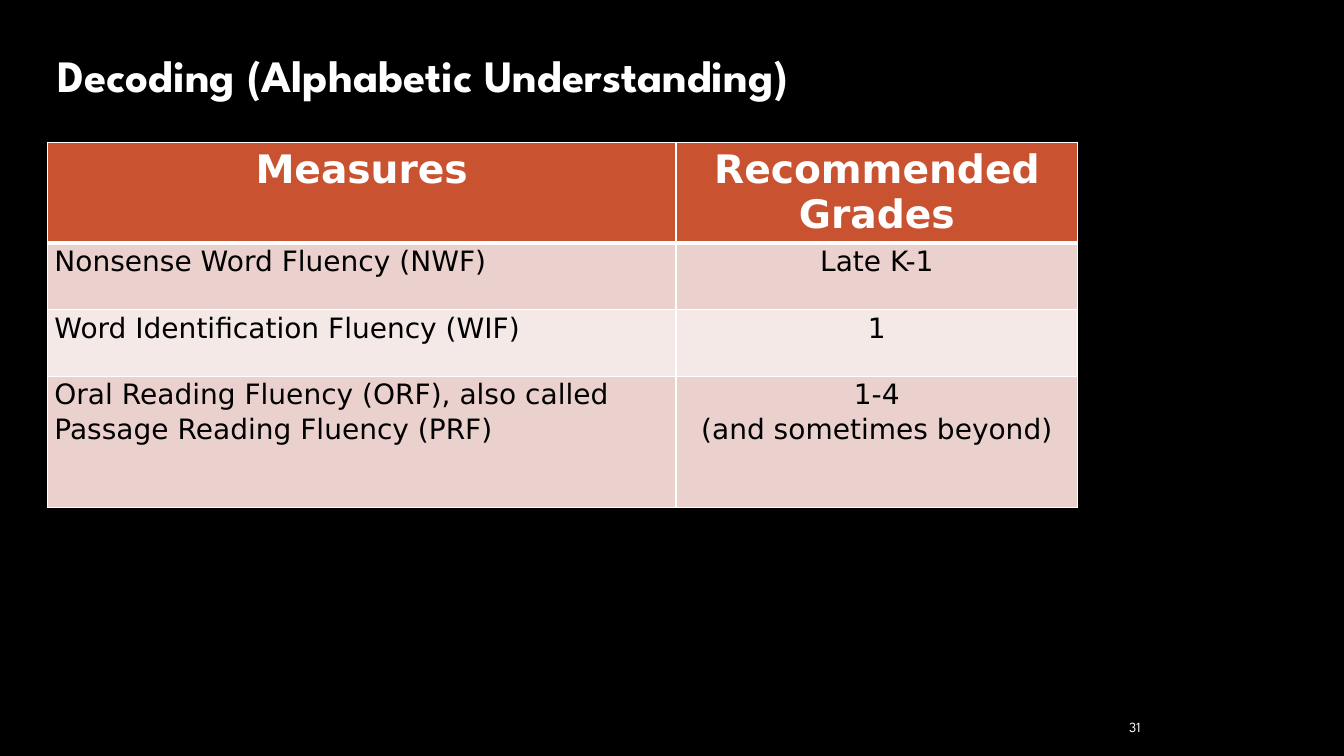
from dataclasses import dataclass

from pptx import Presentation
from pptx.dml.color import RGBColor as RGB
from pptx.enum.text import MSO_ANCHOR as ANCHOR, MSO_AUTO_SIZE as FIT, PP_ALIGN as ALIGN
from pptx.oxml import parse_xml
from pptx.oxml.ns import nsdecls
from pptx.util import Inches, Pt


@dataclass(frozen=True)
class Theme:
    background: str = "000000"
    light: str = "FFFFFF"
    dark: str = "000000"
    header: str = "C95331"
    bands: tuple = ("EBD1CE", "F5E9E8")
    display_font: str = "League Spartan"
    table_font: str = "DejaVu Sans"
    title_size: int = 32
    header_size: int = 28
    body_size: int = 20
    number_size: int = 10


THEME = Theme()
SLIDE_SIZE = (13.33, 7.5)
LEFT = 0.47
TITLE_BOX = (LEFT, 0.31, 9.5, 0.8)
TABLE_BOX = (LEFT, 1.41, 10.22, 3.61)
NUMBER_BOX = (11.04, 7.13, 0.37, 0.17)
COLUMN_SHARES = (0.61, 0.39)
ROW_HEIGHTS = (0.99, 0.66, 0.66, 1.3)

# Each cell is a list of paragraphs
MEASURES = [
    (["Measures"], ["Recommended Grades"]),
    (["Nonsense Word Fluency (NWF)"], ["Late K-1"]),
    (["Word Identification Fluency (WIF)"], ["1"]),
    (["Oral Reading Fluency (ORF), also called Passage Reading Fluency (PRF)"],
     ["1-4", "(and sometimes beyond)"]),
]


def write(frame, lines, font, size, color, bold=False, align=ALIGN.LEFT, spacing=1.0):
    for index, line in enumerate(lines):
        paragraph = frame.add_paragraph() if index else frame.paragraphs[0]
        paragraph.alignment = align
        paragraph.line_spacing = spacing
        run = paragraph.add_run()
        run.text = line
        run.font.name = font
        run.font.size = Pt(size)
        run.font.bold = bold
        run.font.color.rgb = RGB.from_string(color)


def set_margins(holder, side, upright):
    holder.margin_left = holder.margin_right = Inches(side)
    holder.margin_top = holder.margin_bottom = Inches(upright)


def add_title(slide, box, text):
    title = slide.shapes.title
    title.left, title.top, title.width, title.height = map(Inches, box)
    frame = title.text_frame
    frame.auto_size = FIT.NONE
    frame.word_wrap = True
    frame.vertical_anchor = ANCHOR.MIDDLE
    set_margins(frame, 0.1, 0.05)
    write(frame, [text], THEME.display_font, THEME.title_size, THEME.light,
          bold=True, spacing=1.1)


def set_borders(cell, bottom_width):
    # Borders must come before the fill in the cell properties
    properties = cell._tc.get_or_add_tcPr()
    for edge, width in (("lnL", 1), ("lnR", 1), ("lnT", 1), ("lnB", bottom_width)):
        properties.append(parse_xml(
            f'<a:{edge} {nsdecls("a")} w="{Pt(width)}"><a:solidFill>'
            f'<a:srgbClr val="{THEME.light}"/></a:solidFill></a:{edge}>'))


def fill_cell(cell, lines, row, column):
    is_header = row == 0
    set_borders(cell, 3 if is_header else 1)
    cell.fill.solid()
    color = THEME.header if is_header else THEME.bands[(row - 1) % 2]
    cell.fill.fore_color.rgb = RGB.from_string(color)
    cell.vertical_anchor = ANCHOR.TOP
    align = ALIGN.CENTER if is_header or column else ALIGN.LEFT
    if is_header:
        set_margins(cell, 0.1, 0.05)
        write(cell.text_frame, lines, THEME.table_font, THEME.header_size,
              THEME.light, bold=True, align=align)
    else:
        set_margins(cell, 0.07, 0)
        write(cell.text_frame, lines, THEME.table_font, THEME.body_size,
              THEME.dark, align=align, spacing=1.07)


def add_measures_table(slide, box, rows):
    table = slide.shapes.add_table(
        len(rows), len(COLUMN_SHARES), *map(Inches, box)).table
    for column, share in zip(table.columns, COLUMN_SHARES):
        column.width = Inches(box[2] * share)
    for row, height in zip(table.rows, ROW_HEIGHTS):
        row.height = Inches(height)
    for row, cells in enumerate(rows):
        for column, lines in enumerate(cells):
            fill_cell(table.cell(row, column), lines, row, column)


def add_slide_number(slide, box, number):
    frame = slide.shapes.add_textbox(*map(Inches, box)).text_frame
    frame.word_wrap = True
    frame.vertical_anchor = ANCHOR.MIDDLE
    set_margins(frame, 0.1, 0)
    write(frame, [number], THEME.display_font, THEME.number_size, THEME.light,
          align=ALIGN.RIGHT)


def main():
    deck = Presentation()
    deck.slide_width, deck.slide_height = map(Inches, SLIDE_SIZE)
    slide = deck.slides.add_slide(deck.slide_layouts[5])  # Title Only
    slide.background.fill.solid()
    slide.background.fill.fore_color.rgb = RGB.from_string(THEME.background)
    add_title(slide, TITLE_BOX, "Decoding (Alphabetic Understanding)")
    add_measures_table(slide, TABLE_BOX, MEASURES)
    add_slide_number(slide, NUMBER_BOX, "31")
    deck.save("out.pptx")


if __name__ == "__main__":
    main()
